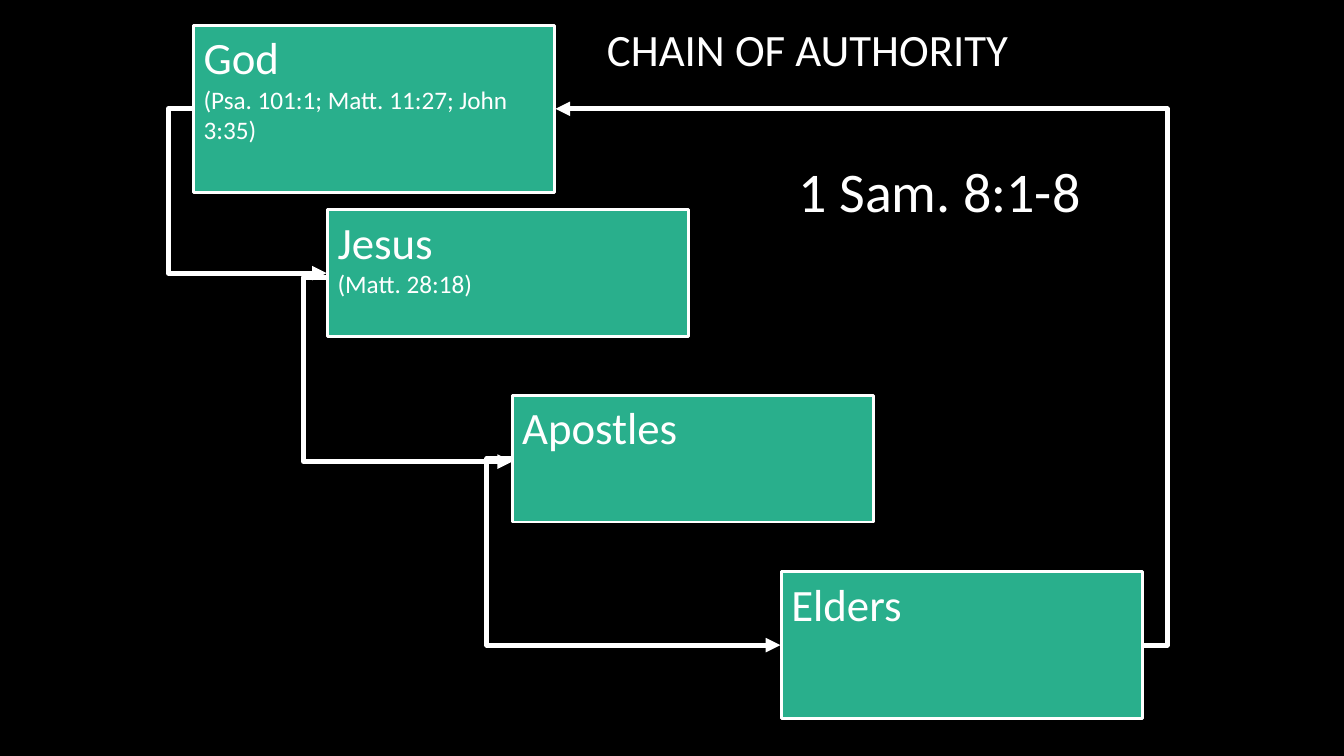
"""Build the "Chain of authority" slide: four stepped boxes joined by elbow arrows."""
from lxml import etree
from pptx import Presentation
from pptx.dml.color import RGBColor
from pptx.enum.shapes import MSO_CONNECTOR, MSO_SHAPE
from pptx.enum.text import MSO_ANCHOR, MSO_AUTO_SIZE, PP_ALIGN
from pptx.oxml.ns import qn
from pptx.util import Pt

PX = 9144
ELBOW = MSO_CONNECTOR.ELBOW
RECTANGLE = MSO_SHAPE.RECTANGLE
TOP = MSO_ANCHOR.TOP
LEFT = PP_ALIGN.LEFT
NO_AUTOFIT = MSO_AUTO_SIZE.NONE
FONT = "Calibri"
COLORS = {name: RGBColor.from_string(value) for name, value in {
    "background": "000000", "box": "29AF8C", "white": "FFFFFF"}.items()}


def emu(*lengths):
    return [length * PX for length in lengths]


def write(tf, lines):
    tf.word_wrap = True
    tf.auto_size = NO_AUTOFIT
    tf.vertical_anchor = TOP
    for i, (text, size) in enumerate(lines):
        p = tf.add_paragraph() if i else tf.paragraphs[0]
        p.alignment = LEFT
        r = p.add_run()
        r.text = text
        r.font.name = FONT
        r.font.size = Pt(size)
        r.font.color.rgb = COLORS["white"]


prs = Presentation()
prs.slide_width, prs.slide_height = emu(1333, 750)
s = prs.slides.add_slide(prs.slide_layouts[5])
s.background.fill.solid()
s.background.fill.fore_color.rgb = COLORS["background"]

title = s.shapes.title
title.left, title.top, title.width, title.height = emu(592, 17, 558, 63)
write(title.text_frame, [("CHAIN OF AUTHORITY", 32)])

BOX_WIDTH = 358
boxes = [
    (192, 25, 166, [("God", 32), ("(Psa. 101:1; Matt. 11:27; John 3:35)", 18)]),
    (325, 208, 126, [("Jesus", 32), ("(Matt. 28:18)", 18)]),
    (508, 392, 126, [("Apostles", 32)]),
    (775, 567, 146, [("Elders", 32)]),
]
for left, top, height, lines in boxes:
    sp = s.shapes.add_shape(RECTANGLE, *emu(left, top, BOX_WIDTH, height))
    sp.shadow.inherit = False
    sp.fill.solid()
    sp.fill.fore_color.rgb = COLORS["box"]
    sp.line.color.rgb = COLORS["white"]
    sp.line.width = Pt(2)
    write(sp.text_frame, lines)

arrows = [
    (190, 108, 324, 271, 167),
    (325, 275, 508, 458, 301),
    (507, 455, 774, 640, 483),
    (1135, 640, 551, 108, 1158),
]
for x1, y1, x2, y2, bend_x in arrows:
    cxn = s.shapes.add_connector(ELBOW, *emu(x1, y1, x2, y2))
    cxn.line.color.rgb = COLORS["white"]
    cxn.line.width = Pt(3.5)
    etree.SubElement(cxn.line._get_or_add_ln(), qn("a:tailEnd"), type="triangle")
    sp_pr = cxn._element.spPr
    etree.SubElement(sp_pr, qn("a:effectLst"))
    bend = round((bend_x - x1) / (x2 - x1) * 100000)
    guides = sp_pr.find(qn("a:prstGeom")).get_or_add_avLst()
    etree.SubElement(guides, qn("a:gd"), name="adj1", fmla=f"val {bend}")

reference = s.shapes.add_textbox(*emu(782, 150, 326, 77))
write(reference.text_frame, [("1 Sam. 8:1-8", 40)])

prs.save("out.pptx")
